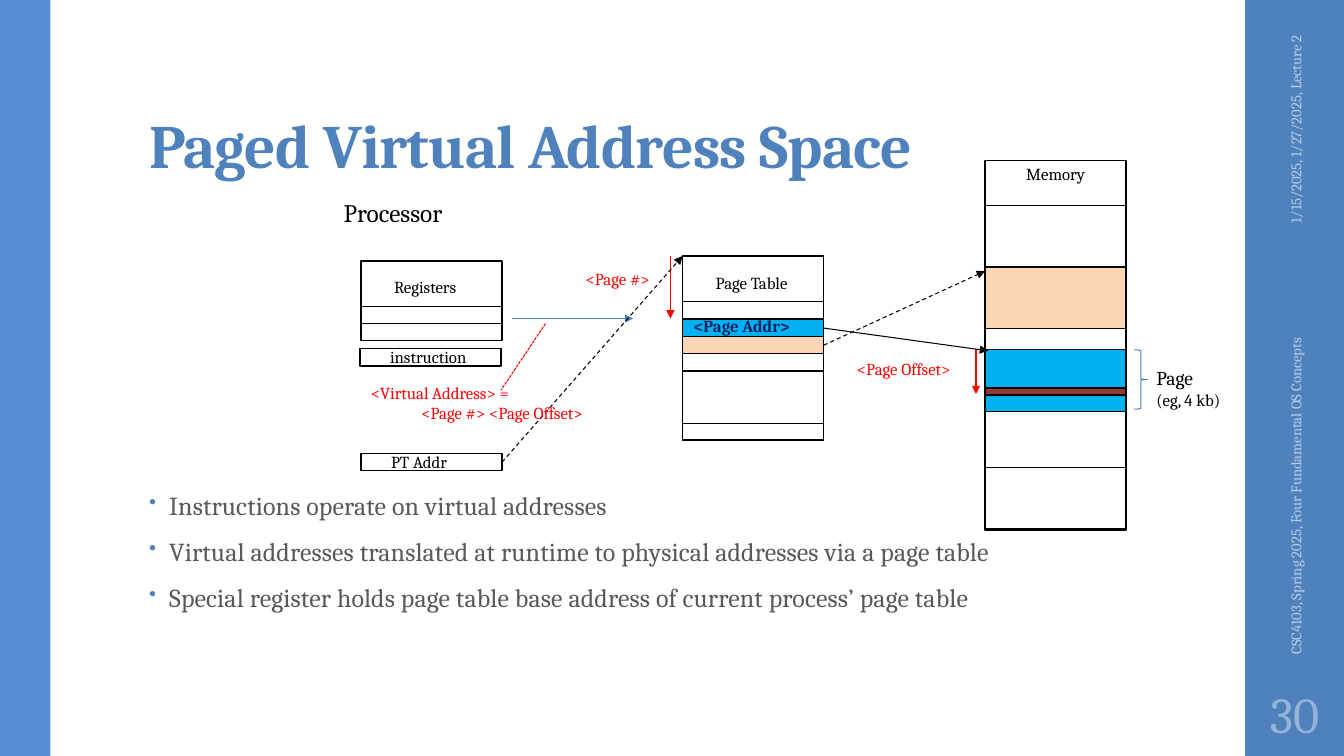
from dataclasses import dataclass
from lxml.etree import SubElement as Sub
from pptx import Presentation
from pptx.dml.color import RGBColor as Rgb
from pptx.enum.dml import MSO_LINE as Dash
from pptx.enum.shapes import MSO_CONNECTOR as Link, MSO_SHAPE as Form
from pptx.enum.text import MSO_ANCHOR as Anchor, MSO_AUTO_SIZE as Auto, PP_ALIGN as Align
from pptx.oxml.ns import qn
from pptx.util import Emu, Pt

PX = 9144


@dataclass(frozen=True)
class Theme:
    font: str = "Cambria"
    blue: str = "4F81BD"
    strip: str = "558ED5"
    pale: str = "B9CDE5"
    number: str = "95B3D7"
    gray: str = "595959"
    black: str = "000000"
    red: str = "FF0000"
    navy: str = "002060"
    cyan: str = "00B0F0"
    peach: str = "FCD5B5"
    maroon: str = "953735"
    title: float = 44
    count: float = 36
    body: float = 18.5
    head: float = 18
    page: float = 14
    label: float = 12
    foot: float = 10.5
    thin: float = 0.75
    edge: float = 1


def px(*sizes):
    return [Emu(size * PX) for size in sizes]


def write(frame, text, font, size, color, bold=False, align=None, space=None,
          before=0, after=0, track=0, bullet=None):
    for i, line in enumerate(text.split("\n")):
        par = frame.paragraphs[0] if i == 0 else frame.add_paragraph()
        par.alignment = align
        par.line_spacing = space
        par.space_before = Pt(before if i else 0)
        par.space_after = Pt(after)
        if bullet:
            prop = par._p.get_or_add_pPr()
            prop.set("marL", str(20 * PX))
            prop.set("indent", str(-20 * PX))
            Sub(Sub(prop, qn("a:buClr")), qn("a:srgbClr"), val=bullet)
            Sub(prop, qn("a:buSzPct"), val="80000")
            Sub(prop, qn("a:buChar"), char="•")
        run = par.add_run()
        run.text = line
        run.font.name = font
        run.font.size = Pt(size[i] if isinstance(size, tuple) else size)
        run.font.bold = bold
        run.font.color.rgb = Rgb.from_string(color)
        if track:
            run._r.get_or_add_rPr().set("spc", str(track))


class Board:
    """Draws styled elements on one slide."""

    def __init__(self, theme, slide):
        self.theme = theme
        self.shapes = slide.shapes

    def box(self, x, y, w, h, fill=None, line=None, form=Form.RECTANGLE, width=None):
        shape = self.shapes.add_shape(form, *px(x, y, w, h))
        shape.shadow.inherit = False
        if fill:
            shape.fill.solid()
            shape.fill.fore_color.rgb = Rgb.from_string(fill)
        else:
            shape.fill.background()
        if line:
            shape.line.color.rgb = Rgb.from_string(line)
            shape.line.width = Pt(width or self.theme.edge)
        else:
            shape.line.fill.background()
        return shape

    def cell(self, x, y, h=17, fill=None):
        return self.box(x, y, 140, h, fill, self.theme.black)

    def text(self, x, y, w, h, text, size=None, color=None, wrap=True, turn=0,
             anchor=Anchor.TOP, inset=(10, 5, 10, 5), grow=False, **form):
        shape = self.shapes.add_textbox(*px(x, y, w, h))
        shape.rotation = turn
        frame = shape.text_frame
        frame.word_wrap = wrap
        frame.auto_size = Auto.SHAPE_TO_FIT_TEXT if grow else Auto.NONE
        frame.vertical_anchor = anchor
        (frame.margin_left, frame.margin_top,
         frame.margin_right, frame.margin_bottom) = px(*inset)
        write(frame, text, self.theme.font, size or self.theme.label,
              color or self.theme.black, **form)

    def label(self, x, y, w, text, h=30, wrap=False, **form):
        self.text(x, y, w, h, text, wrap=wrap, grow=True, **form)

    def line(self, x, y, to_x, to_y, color, dash=None, head=True, start=None):
        link = self.shapes.add_connector(Link.STRAIGHT, *px(x, y, to_x, to_y))
        if start:
            link.begin_connect(start, 3)
        link.line.color.rgb = Rgb.from_string(color)
        link.line.width = Pt(self.theme.thin)
        if dash:
            link.line.dash_style = dash
        if head:
            Sub(link.line._get_or_add_ln(), qn("a:tailEnd"), type="triangle")
        Sub(link._element.spPr, qn("a:effectLst"))


def frame(board, t):
    board.box(1235, 0, 98, 750, t.blue)
    board.box(0, 0, 50, 750, t.strip)
    board.text(138, 32, 1060, 153, "Paged Virtual Address Space", t.title, t.blue,
               anchor=Anchor.BOTTOM, inset=(10, 3, 10, 5), bold=True, space=0.9, track=-50)
    board.text(138, 488, 940, 188,
               "Instructions operate on virtual addresses\n"
               "Virtual addresses translated at runtime to physical addresses via a page table\n"
               "Special register holds page table base address of current process’ page table",
               t.body, t.gray, space=0.75, before=14, after=2, track=10, bullet=t.blue)
    board.text(1181, 109, 208, 40, "1/15/2025, 1/27/2025, Lecture 2", t.foot, t.pale,
               turn=270, anchor=Anchor.MIDDLE, align=Align.RIGHT)
    board.text(1089, 443, 392, 40, "CSC4103, Spring 2025, Four Fundamental OS Concepts",
               t.foot, t.pale, turn=270, anchor=Anchor.MIDDLE)
    board.text(1235, 675, 98, 65, "30", t.count, t.number, anchor=Anchor.MIDDLE,
               inset=(5, 5, 5, 5), align=Align.CENTER)


def chart(board, t):
    board.label(331, 191, 132, "Processor", h=40, size=t.head)
    board.cell(358, 259, 79)
    board.cell(358, 304)
    board.cell(357, 346)
    base = board.cell(358, 450)

    board.cell(677, 254, 182)
    for y in (299, 351, 420):
        board.cell(677, y)
    near = board.cell(677, 317, fill=t.cyan)
    far = board.cell(677, 334, fill=t.peach)

    board.cell(977, 159, 367)
    for y, fill in ((204, None), (265, t.peach), (347, t.cyan), (464, None)):
        board.cell(977, y, 61, fill)
    board.cell(977, 385, 7, t.maroon)
    board.box(1125, 347, 13, 59, line=t.blue, form=Form.RIGHT_BRACE, width=t.thin)

    board.line(508, 316, 628, 316, t.blue)
    board.line(541, 321, 497, 387, t.red, Dash.SQUARE_DOT, head=False)
    board.line(665, 254, 665, 316, t.red)
    board.line(968, 346, 968, 391, t.red)
    board.line(817, 325, 980, 348, t.black, start=near)
    board.line(817, 344, 977, 269, t.black, Dash.DASH, start=far)
    board.line(498, 459, 677, 254, t.black, Dash.DASH, start=base)

    for x, y, w, name in ((381, 270, 93, "Registers"), (700, 266, 105, "Page Table"),
                          (1008, 158, 85, "Memory"), (377, 339, 106, "instruction"),
                          (378, 443, 85, "PT Addr")):
        board.label(x, y, w, name)
    board.label(571, 262, 97, "<Page #>", color=t.red)
    board.label(840, 351, 135, "<Page Offset>", color=t.red)
    board.label(678, 308, 126, "<Page Addr>", color=t.navy, bold=True)
    board.label(358, 375, 328, "<Virtual Address> =\n\t<Page #> <Page Offset>",
                h=50, wrap=True, color=t.red)
    board.label(1137, 358, 92, "Page\n(eg, 4 kb)", h=54, size=(t.page, t.label))


def main():
    deck = Presentation()
    deck.slide_width, deck.slide_height = px(1333, 750)
    theme = Theme()
    board = Board(theme, deck.slides.add_slide(deck.slide_layouts[6]))
    frame(board, theme)
    chart(board, theme)
    deck.save("out.pptx")


if __name__ == "__main__":
    main()
